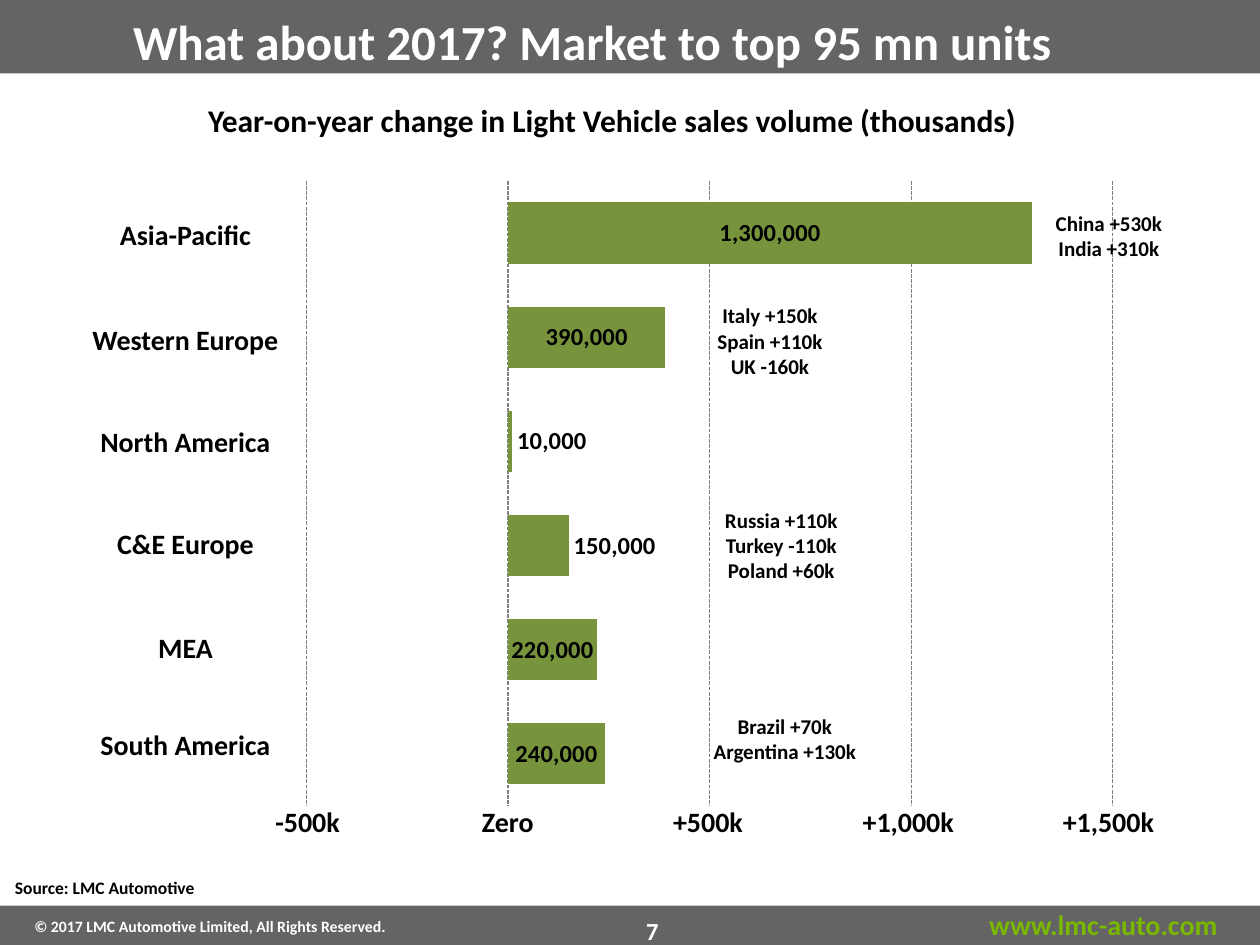
from dataclasses import dataclass

import pptx
import pptx.chart.data
import pptx.dml.color
import pptx.enum.chart
import pptx.enum.dml
import pptx.enum.shapes
import pptx.enum.text
import pptx.util
from lxml import etree

Pt = pptx.util.Pt
RGBColor = pptx.dml.color.RGBColor
PP_ALIGN = pptx.enum.text.PP_ALIGN

FONT = "Calibri"
GREY = RGBColor(0x64, 0x64, 0x64)
GRID = RGBColor(0x80, 0x80, 0x80)
WHITE = RGBColor(0xFF, 0xFF, 0xFF)
BLACK = RGBColor(0, 0, 0)
LIME = RGBColor(0x7A, 0xB8, 0x00)
GREEN = RGBColor(0x77, 0x93, 0x3C)

LABEL_W = 124
AXIS_LEFT, AXIS_STEP, AXIS_TOP = 113.8, 114.4, 456


@dataclass
class Region:
    name: str
    top: float
    change: int


@dataclass
class Note:
    left: float
    top: float
    lines: list[str]


REGIONS = [
    Region("Asia-Pacific", 121, 1300000),
    Region("Western Europe", 180.5, 390000),
    Region("North America", 239, 10000),
    Region("C&E Europe", 297.5, 150000),
    Region("MEA", 357, 220000),
    Region("South America", 412, 240000),
]
NOTES = [
    Note(571.7, 116.5, ["China +530k", "India +310k"]),
    Note(378, 169.5, ["Italy +150k", "Spain +110k", "UK -160k"]),
    Note(384.5, 286.5, ["Russia +110k", "Turkey -110k", "Poland +60k"]),
    Note(386.5, 404, ["Brazil +70k", "Argentina +130k"]),
]
AXIS_LABELS = ["-500k", "Zero", "+500k", "+1,000k", "+1,500k"]


def add_rect(s, left: float, top: float, width: float, height: float,
             fill: RGBColor) -> None:
    sp = s.shapes.add_shape(pptx.enum.shapes.MSO_SHAPE.RECTANGLE,
                            Pt(left), Pt(top), Pt(width), Pt(height))
    sp.shadow.inherit = False
    sp.fill.solid()
    sp.fill.fore_color.rgb = fill
    sp.line.fill.background()


def add_text(s, lines: list[str], *, left: float, top: float, width: float = LABEL_W,
             height: float = 26.5, size: float = 16, color: RGBColor = BLACK,
             align=PP_ALIGN.CENTER, fill: RGBColor | None = None) -> None:
    sp = s.shapes.add_textbox(Pt(left), Pt(top), Pt(width), Pt(height))
    if fill is not None:
        sp.fill.solid()
        sp.fill.fore_color.rgb = fill
    tf = sp.text_frame
    tf.word_wrap = True
    for i, line in enumerate(lines):
        p = tf.add_paragraph() if i else tf.paragraphs[0]
        p.alignment = align
        r = p.add_run()
        r.text = line
        r.font.name = FONT
        r.font.size = Pt(size)
        r.font.bold = True
        r.font.color.rgb = color


def style_label(font) -> None:
    font.name = FONT
    font.size = Pt(14)
    font.bold = True
    font.color.rgb = BLACK


def set_plot_layout(chart, x: float, y: float, w: float, h: float) -> None:
    area = chart._chartSpace.chart.plotArea
    ns = area.nsmap["c"]
    for old in area.findall(f"{{{ns}}}layout"):
        area.remove(old)
    layout = etree.Element(f"{{{ns}}}layout")
    manual = etree.SubElement(layout, f"{{{ns}}}manualLayout")
    settings = {"layoutTarget": "inner", "xMode": "edge", "yMode": "edge",
                "x": x, "y": y, "w": w, "h": h}
    for tag, val in settings.items():
        etree.SubElement(manual, f"{{{ns}}}{tag}").set("val", str(val))
    area.insert(0, layout)


def add_sales_chart(s) -> None:
    rows = REGIONS[::-1]
    data = pptx.chart.data.CategoryChartData(number_format="#,##0")
    data.categories = [str(i + 1) for i in range(len(rows))]
    data.add_series("Series 1", [row.change for row in rows])
    chart = s.shapes.add_chart(pptx.enum.chart.XL_CHART_TYPE.BAR_CLUSTERED,
                               Pt(48), Pt(96), Pt(600), Pt(372), data).chart
    chart.has_legend = False
    chart.has_title = False
    chart.font.name = FONT
    chart.font.size = Pt(18)
    chart.font.color.rgb = BLACK
    set_plot_layout(chart, 0.02, 0.02, 0.96, 0.96)

    chart.category_axis.visible = False
    axis = chart.value_axis
    axis.visible = False
    axis.minimum_scale, axis.maximum_scale = -1000000, 1500000
    axis.major_unit = 500000
    axis.has_major_gridlines = True
    line = axis.major_gridlines.format.line
    line.color.rgb = GRID
    line.width = Pt(0.75)
    line.dash_style = pptx.enum.dml.MSO_LINE.SQUARE_DOT

    plot = chart.plots[0]
    plot.gap_width = 70
    plot.vary_by_categories = False
    series = plot.series[0]
    series.format.fill.solid()
    series.format.fill.fore_color.rgb = GREEN
    labels = series.data_labels
    labels.show_value = True
    labels.number_format = "#,##0"
    labels.number_format_is_linked = False
    labels.position = pptx.enum.chart.XL_LABEL_POSITION.CENTER
    style_label(labels.font)
    for i, row in enumerate(rows):
        if row.change < 200000:
            label = series.points[i].data_label
            style_label(label.font)
            label.position = pptx.enum.chart.XL_LABEL_POSITION.OUTSIDE_END


def main() -> None:
    prs = pptx.Presentation()
    prs.slide_width, prs.slide_height = Pt(720), Pt(540)
    s = prs.slides.add_slide(prs.slide_layouts[6])

    add_rect(s, 0, 0, 720, 42, GREY)
    add_rect(s, 0, 517.5, 720, 22.5, GREY)
    add_text(s, ["www.lmc-auto.com"], left=548.5, top=515, width=164, color=LIME)
    add_text(s, ["© 2017 LMC Automotive Limited, All Rights Reserved."], left=12.5,
             top=520.5, width=258.5, height=18, size=9, color=WHITE, align=PP_ALIGN.LEFT)
    add_text(s, ["7"], left=243.5, top=520, width=258.5, height=24, size=14, color=WHITE)
    add_text(s, ["What about 2017? Market to top 95 mn units"], left=69, top=3,
             width=634, height=41, size=28, color=WHITE, align=PP_ALIGN.LEFT)
    add_text(s, ["Year-on-year change in Light Vehicle sales volume (thousands)"],
             left=59.5, top=54, width=581, height=29, size=18)
    add_text(s, ["Source: LMC Automotive"], left=1.5, top=497.5, width=257,
             height=19.5, size=10, align=PP_ALIGN.LEFT)

    add_sales_chart(s)
    add_rect(s, 44, 90, 34, 378, WHITE)
    for region in REGIONS:
        add_text(s, [region.name], left=44, top=region.top, fill=WHITE)
    for i, label in enumerate(AXIS_LABELS):
        add_text(s, [label], left=AXIS_LEFT + i * AXIS_STEP, top=AXIS_TOP)
    for note in NOTES:
        add_text(s, note.lines, left=note.left, top=note.top,
                 height=7.2 + 14.6 * len(note.lines), size=12)

    prs.save("out.pptx")


if __name__ == "__main__":
    main()
